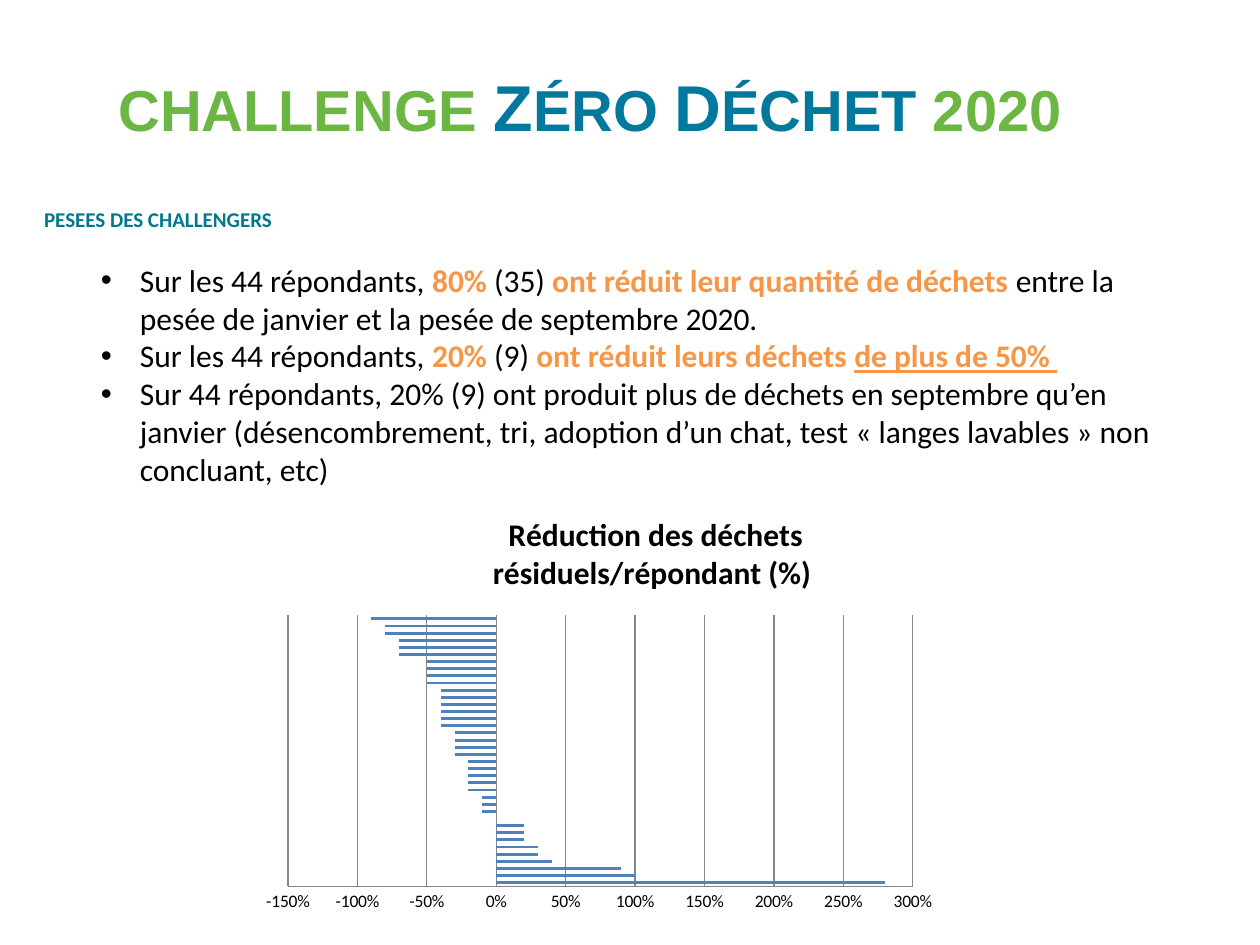
import dataclasses

import pptx
import pptx.chart.data
import pptx.dml.color
import pptx.enum.chart
import pptx.enum.text
import pptx.oxml
import pptx.oxml.ns
import pptx.util

Inches = pptx.util.Inches
Pt = pptx.util.Pt


@dataclasses.dataclass(frozen=True)
class Theme:
    """Colours, fonts and type sizes of the slide."""
    green: str = "6CB644"
    blue: str = "00799D"
    teal: str = "007890"
    orange: str = "F79646"
    black: str = "000000"
    bar: str = "4F81BD"
    grid: str = "868686"
    head: str = "Arial"
    text: str = "Calibri"
    title: int = 33
    cap: int = 37
    body: int = 18
    label: int = 12
    tick: int = 10


THEME = Theme()
PLAIN = {"color": THEME.black, "bold": False}
STRONG = {"color": THEME.orange, "bold": True}
LINED = {**STRONG, "underline": True}
GREEN = {"color": THEME.green, "size": THEME.title}
BLUE = {"color": THEME.blue, "size": THEME.title}
LARGE = {"color": THEME.blue, "size": THEME.cap}

TITLE = [("CHALLENGE ", GREEN), ("Z", LARGE), ("ÉRO ", BLUE),
         ("D", LARGE), ("ÉCHET ", BLUE), ("2020", GREEN)]
POINTS = [
    [("Sur les 44 répondants, ", PLAIN), ("80% ", STRONG), ("(35) ", PLAIN),
     ("ont réduit leur quantité de déchets", STRONG),
     (" entre la pesée de janvier et la pesée de septembre 2020.", PLAIN)],
    [("Sur les 44 répondants, ", PLAIN), ("20%", STRONG), (" (9) ", PLAIN),
     ("ont réduit leurs déchets ", STRONG), ("de plus de 50% ", LINED)],
    [("Sur 44 répondants, 20% (9) ont produit plus de déchets en septembre "
      "qu’en janvier (désencombrement, tri, adoption d’un chat, test "
      "«\u00a0langes lavables\u00a0» non concluant, etc)", PLAIN)],
]
VALUES = [2.8, 1, 0.9, 0.4, 0.3, 0.3, 0.2, 0.2, 0.2, 0,
          -0.1, -0.1, -0.1, -0.2, -0.2, -0.2, -0.2, -0.2, -0.3, -0.3,
          -0.3, -0.3, -0.4, -0.4, -0.4, -0.4, -0.4, -0.4, -0.5, -0.5,
          -0.5, -0.5, -0.7, -0.7, -0.7, -0.8, -0.8, -0.9]


def apply(item, form):
    """Set each format value on an object."""
    for name, value in form.items():
        setattr(item, name, value)


def style(font, color, size=None, **form):
    """Format a font from theme values."""
    if size:
        font.size = Pt(size)
    font.color.rgb = pptx.dml.color.RGBColor.from_string(color)
    apply(font, form)


def place(shape, left, top, width, height):
    """Move and size a shape in inches."""
    spots = {"left": left, "top": top, "width": width, "height": height}
    apply(shape, {name: Inches(value) for name, value in spots.items()})


def frame(shape, anchor, inset):
    """Set up the text frame of a placeholder."""
    text = shape.text_frame
    apply(text, {"word_wrap": True, "vertical_anchor": anchor,
                 "auto_size": pptx.enum.text.MSO_AUTO_SIZE.NONE})
    sides, ends = inset
    apply(text, {"margin_left": Inches(sides), "margin_right": Inches(sides),
                 "margin_top": Inches(ends), "margin_bottom": Inches(ends)})
    return text


def mark(para, indent, sign=None):
    """Set the hanging indent and the bullet of a paragraph."""
    props = para._p.get_or_add_pPr()
    props.set("marL", str(Inches(indent)))
    props.set("indent", str(-Inches(indent)))
    space = pptx.oxml.ns.nsdecls("a")
    tags = ([f'<a:buFont {space} typeface="Arial"/>',
             f'<a:buChar {space} char="{sign}"/>'] if sign
            else [f"<a:buNone {space}/>"])
    for tag in tags:
        props.append(pptx.oxml.parse_xml(tag))


def write(para, runs, align=pptx.enum.text.PP_ALIGN.LEFT, **base):
    """Fill a paragraph with formatted runs."""
    apply(para, {"alignment": align, "space_before": Pt(0)})
    for text, form in runs:
        run = para.add_run()
        run.text = text
        style(run.font, **{**base, **form})


def pin(node, index, **spots):
    """Fix a chart part at fractions of the chart area."""
    for old in node.findall(pptx.oxml.ns.qn("c:layout")):
        node.remove(old)
    inner = '<c:layoutTarget val="inner"/>' if "w" in spots else ""
    modes = "".join(f'<c:{key}Mode val="edge"/>' for key in "xy")
    sizes = "".join(f'<c:{key} val="{val}"/>' for key, val in spots.items())
    node.insert(index, pptx.oxml.parse_xml(
        f'<c:layout {pptx.oxml.ns.nsdecls("c")}><c:manualLayout>'
        f"{inner}{modes}{sizes}</c:manualLayout></c:layout>"))


def add_title(shape):
    """Write the slide title."""
    place(shape, 0.87, 0.47, 9, 0.74)
    text = frame(shape, pptx.enum.text.MSO_ANCHOR.MIDDLE, (0.07, 0.07))
    write(text.paragraphs[0], TITLE, name=THEME.head, bold=True)


def add_label(shape):
    """Write the section label."""
    place(shape, 0.28, 1.51, 9.36, 5.99)
    text = frame(shape, pptx.enum.text.MSO_ANCHOR.TOP, (0.07, 0.07))
    para = text.paragraphs[0]
    mark(para, 0)
    para.line_spacing = 1.3
    write(para, [("PESEES DES CHALLENGERS", {})], name=THEME.text,
          size=THEME.label, color=THEME.teal, bold=True)


def add_list(shape):
    """Write the bullet list."""
    place(shape, 0.7, 2.02, 8.74, 2.15)
    text = frame(shape, pptx.enum.text.MSO_ANCHOR.TOP, (0.1, 0.05))
    for rank, runs in enumerate(POINTS):
        para = text.add_paragraph() if rank else text.paragraphs[0]
        mark(para, 0.31, "•")
        write(para, runs, name=THEME.text, size=THEME.body)


def add_bars(slide):
    """Draw the bar chart of waste change by person."""
    data = pptx.chart.data.CategoryChartData(number_format="0%")
    data.categories = [str(rank + 1) for rank in range(len(VALUES))]
    data.add_series("Réduction", VALUES)
    spot = [Inches(value) for value in (2.01, 3.99, 5.51, 3.31)]
    kind = pptx.enum.chart.XL_CHART_TYPE.BAR_CLUSTERED
    chart = slide.shapes.add_chart(kind, *spot, data).chart
    style(chart.font, THEME.black, THEME.tick, name=THEME.text)
    apply(chart, {"has_legend": False, "has_title": True})
    title = chart.chart_title
    write(title.text_frame.paragraphs[0],
          [("Réduction des déchets résiduels/répondant (%) ", {})],
          align=pptx.enum.text.PP_ALIGN.CENTER, name=THEME.text,
          size=THEME.body, color=THEME.black, bold=True)
    pin(title._element, 1, x=0.26, y=0.01)
    pin(chart._chartSpace.chart.plotArea, 0, x=0.05, y=0.27, w=0.9, h=0.65)
    chart.category_axis.visible = False
    axis = chart.value_axis
    apply(axis, {"minimum_scale": -1.5, "maximum_scale": 3, "major_unit": 0.5,
                 "has_major_gridlines": True,
                 "major_tick_mark": pptx.enum.chart.XL_TICK_MARK.NONE})
    apply(axis.tick_labels, {"number_format": "0%",
                             "number_format_is_linked": False})
    for part in (axis, axis.major_gridlines):
        line = part.format.line
        line.width = Pt(0.75)
        line.color.rgb = pptx.dml.color.RGBColor.from_string(THEME.grid)
    plot = chart.plots[0]
    apply(plot, {"gap_width": 150, "vary_by_categories": False})
    bars = plot.series[0]
    bars.invert_if_negative = False
    bars.format.fill.solid()
    bars.format.fill.fore_color.rgb = (
        pptx.dml.color.RGBColor.from_string(THEME.bar))


def main():
    """Build the slide and save it."""
    deck = pptx.Presentation()
    apply(deck, {"slide_width": Inches(10), "slide_height": Inches(7.5)})
    slide = deck.slides.add_slide(deck.slide_layouts.get_by_name("Two Content"))
    title, label, points = slide.placeholders
    add_title(title)
    add_label(label)
    add_list(points)
    add_bars(slide)
    deck.save("out.pptx")


if __name__ == "__main__":
    main()
